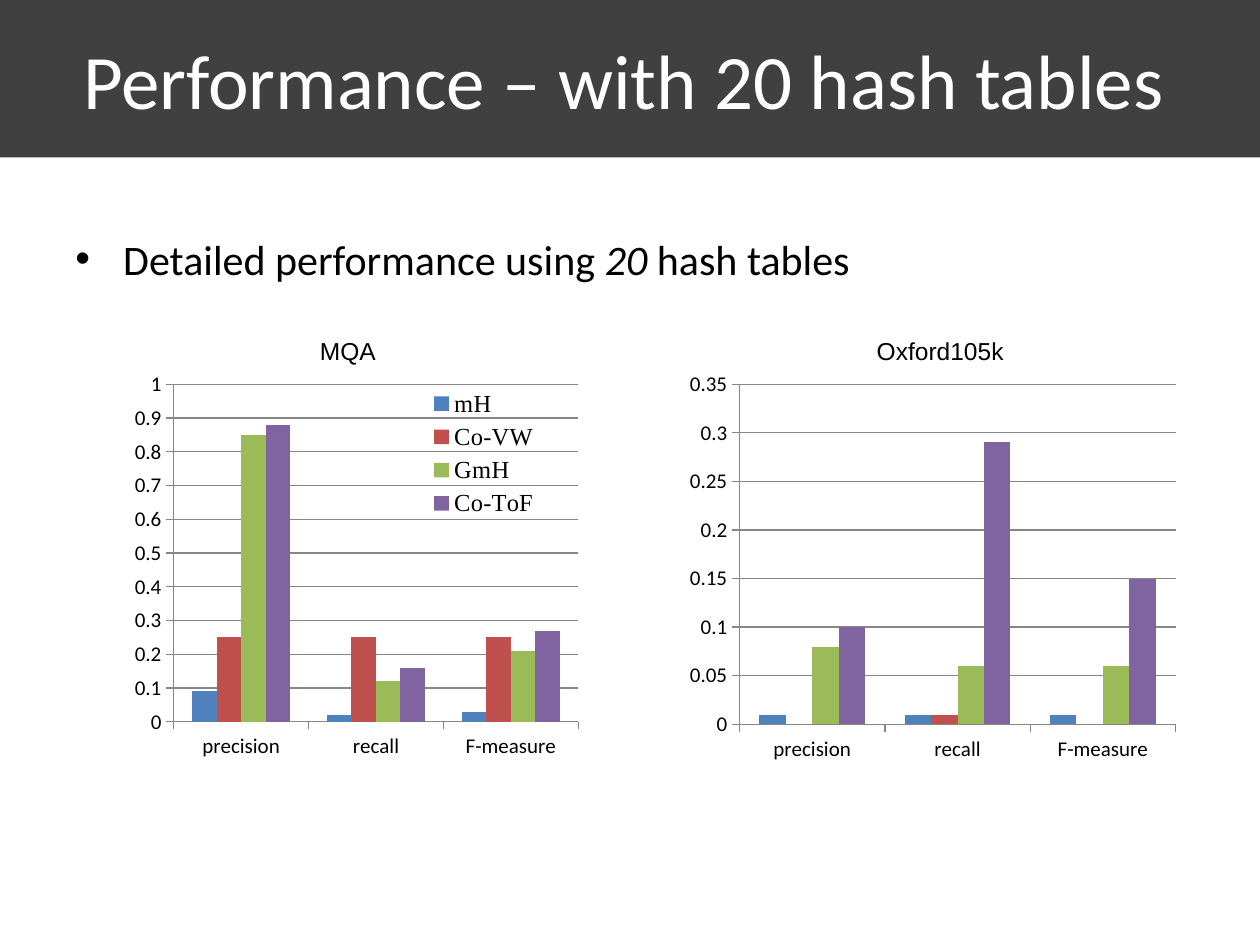
import pptx
import pptx.chart.data
import pptx.dml.color
import pptx.enum.chart
import pptx.enum.shapes
import pptx.enum.text
import pptx.oxml
import pptx.oxml.ns
import pptx.util

Inches, Pt = pptx.util.Inches, pptx.util.Pt

COLORS = {"banner": "404040", "white": "FFFFFF", "text": "000000", "grid": "868686"}
SERIES_COLORS = ["4F81BD", "C0504D", "9BBB59", "8064A2"]

# Content; all boxes are left, top, width, height on the slide in inches
TITLE = "Performance – with 20 hash tables"
BULLET_RUNS = [("Detailed performance using ", False), ("20", True), (" hash tables", False)]
CATEGORIES = ["precision", "recall", "F-measure"]
CHARTS = [
    {
        "title": "MQA", "title_box": (2.44, 2.62, 0.65, 0.34),
        "box": (0.91, 2.88, 3.7, 3.25), "plot": (1.38, 3.05, 3.21, 2.68),
        "legend": (3.32, 3.05, 1.04, 1.1),
        "maximum": 1, "step": 0.1,
        "series": [
            ("mH", [0.09, 0.02, 0.03]),
            ("Co-VW", [0.25, 0.25, 0.25]),
            ("GmH", [0.85, 0.12, 0.21]),
            ("Co-ToF", [0.88, 0.16, 0.27]),
        ],
    },
    {
        "title": "Oxford105k", "title_box": (6.86, 2.62, 1.21, 0.34),
        "box": (5.39, 2.88, 4.02, 3.23), "plot": (5.87, 3.05, 3.46, 2.7),
        "legend": None,
        "maximum": 0.35, "step": 0.05,
        "series": [
            ("Series 1", [0.01, 0.01, 0.01]),
            ("Series 2", [0, 0.01, 0]),
            ("Series 3", [0.08, 0.06, 0.06]),
            ("Series 4", [0.1, 0.29, 0.15]),
        ],
    },
]


def rgb(value):
    return pptx.dml.color.RGBColor.from_string(value)


def set_font(font, size, name="Calibri", color=COLORS["text"]):
    font.size, font.name, font.bold = Pt(size), name, False
    font.color.rgb = rgb(color)


def add_run(paragraph, text, size, name="Calibri", color=COLORS["text"], italic=False):
    run = paragraph.add_run()
    run.text = text
    set_font(run.font, size, name, color)
    run.font.italic = italic


def add_textbox(slide, box, wrap):
    frame = slide.shapes.add_textbox(*map(Inches, box)).text_frame
    frame.word_wrap = wrap
    return frame


def set_layout(chart, tag, position, box, chart_box, inner=False):
    """Place a chart part by its box on the slide."""
    parent = chart.element.find(".//" + pptx.oxml.ns.qn(tag))
    for old in parent.findall(pptx.oxml.ns.qn("c:layout")):
        parent.remove(old)
    left, top, width, height = chart_box
    fractions = ((box[0] - left) / width, (box[1] - top) / height,
                 box[2] / width, box[3] / height)
    target = '<c:layoutTarget val="inner"/>' if inner else ""
    modes = '<c:xMode val="edge"/><c:yMode val="edge"/>'
    sizes = "".join(f'<c:{key} val="{value:.4f}"/>' for key, value in zip("xywh", fractions))
    parent.insert(position, pptx.oxml.parse_xml(
        f'<c:layout {pptx.oxml.ns.nsdecls("c")}><c:manualLayout>'
        f"{target}{modes}{sizes}</c:manualLayout></c:layout>"))


def add_column_chart(slide, item):
    data = pptx.chart.data.CategoryChartData()
    data.categories = CATEGORIES
    for name, values in item["series"]:
        data.add_series(name, values)
    chart = slide.shapes.add_chart(
        pptx.enum.chart.XL_CHART_TYPE.COLUMN_CLUSTERED, *map(Inches, item["box"]), data).chart
    chart.has_title = False
    set_font(chart.font, 18)

    # Columns
    plot = chart.plots[0]
    plot.gap_width, plot.overlap, plot.vary_by_categories = 150, 0, False
    for series, color in zip(plot.series, SERIES_COLORS):
        series.format.fill.solid()
        series.format.fill.fore_color.rgb = rgb(color)

    # Axes and gridlines
    value_axis = chart.value_axis
    value_axis.minimum_scale, value_axis.maximum_scale = 0, item["maximum"]
    value_axis.major_unit = item["step"]
    value_axis.has_major_gridlines = True
    for axis in (chart.category_axis, value_axis):
        axis.major_tick_mark = pptx.enum.chart.XL_TICK_MARK.OUTSIDE
        set_font(axis.tick_labels.font, 12)
    for part in (chart.category_axis, value_axis, value_axis.major_gridlines):
        part.format.line.color.rgb = rgb(COLORS["grid"])
        part.format.line.width = Pt(0.75)
    set_layout(chart, "c:plotArea", 0, item["plot"], item["box"], inner=True)

    # Legend laid over the plot
    chart.has_legend = item["legend"] is not None
    if chart.has_legend:
        chart.legend.position = pptx.enum.chart.XL_LEGEND_POSITION.RIGHT
        chart.legend.include_in_layout = True
        set_font(chart.legend.font, 14, "Times New Roman")
        set_layout(chart, "c:legend", 1, item["legend"], item["box"])


presentation = pptx.Presentation()
presentation.slide_width, presentation.slide_height = Inches(10), Inches(7.5)
slide = presentation.slides.add_slide(presentation.slide_layouts[6])

# Title banner
banner = slide.shapes.add_shape(
    pptx.enum.shapes.MSO_SHAPE.RECTANGLE, 0, 0, Inches(10), Inches(1.25))
banner.shadow.inherit = False
banner.fill.solid()
banner.fill.fore_color.rgb = rgb(COLORS["banner"])
banner.line.fill.background()
frame = banner.text_frame
frame.margin_left = Inches(0.66)
frame.vertical_anchor = pptx.enum.text.MSO_ANCHOR.MIDDLE
frame.paragraphs[0].alignment = pptx.enum.text.PP_ALIGN.LEFT
add_run(frame.paragraphs[0], TITLE, 44, color=COLORS["white"])

# Bullet
frame = add_textbox(slide, (0.5, 1.75, 9, 5.43), True)
frame.margin_left = frame.margin_right = frame.margin_top = frame.margin_bottom = Inches(0.1)
paragraph = frame.paragraphs[0]
properties = paragraph._p.get_or_add_pPr()
properties.set("marL", str(Inches(0.38)))
properties.set("indent", str(-Inches(0.38)))
for tag, key, value in (("buFont", "typeface", "Arial"), ("buChar", "char", "•")):
    properties.append(pptx.oxml.parse_xml(
        f'<a:{tag} {pptx.oxml.ns.nsdecls("a")} {key}="{value}"/>'))
for text, italic in BULLET_RUNS:
    add_run(paragraph, text, 24, italic=italic)

# Charts with their headings
for item in CHARTS:
    add_column_chart(slide, item)
    heading = add_textbox(slide, item["title_box"], False)
    add_run(heading.paragraphs[0], item["title"], 14, "Arial")

presentation.save("out.pptx")
